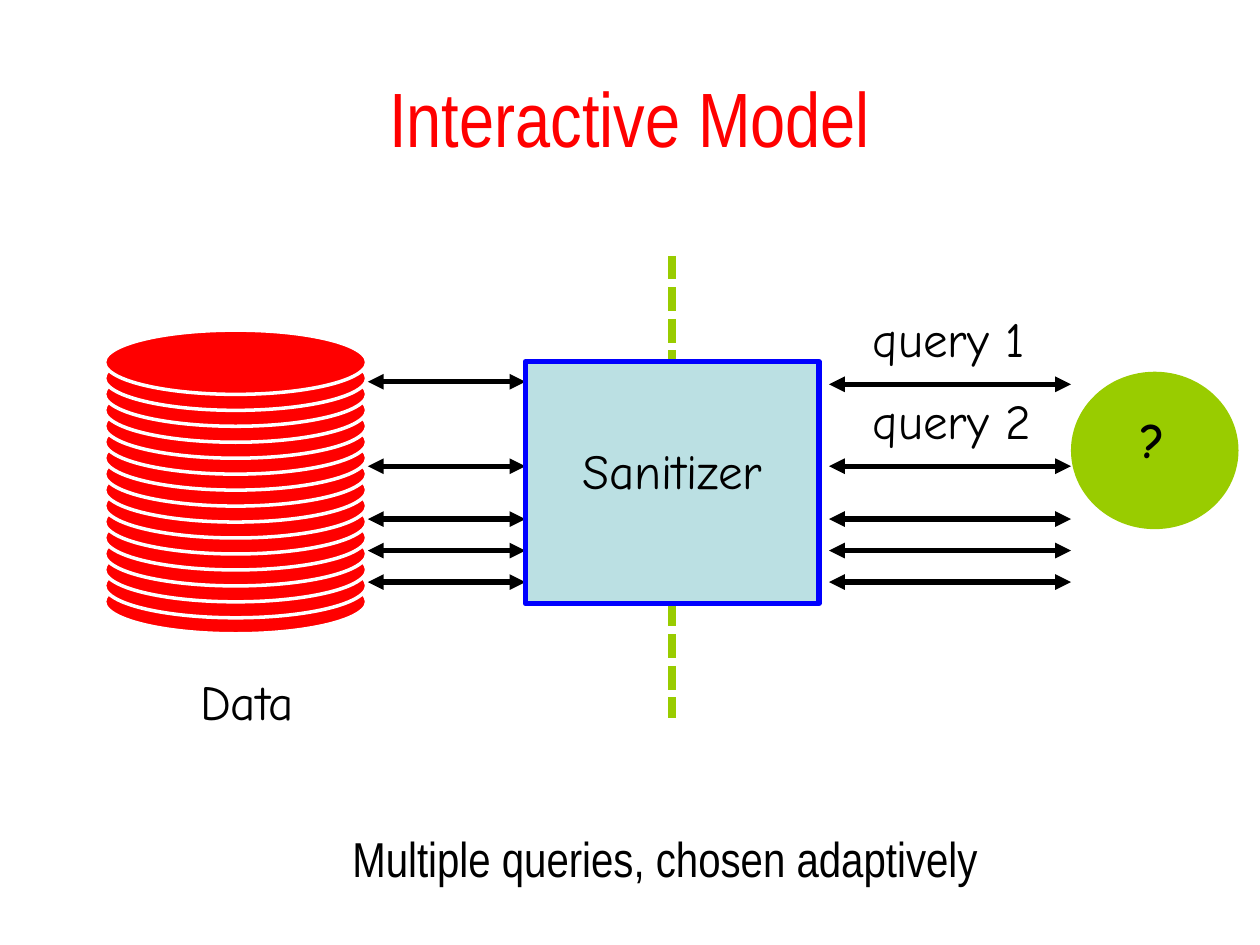
from dataclasses import dataclass
from typing import Any

from lxml import etree
from pptx import Presentation
from pptx import util as u
from pptx.dml.color import RGBColor
from pptx.enum import dml, shapes, text
from pptx.oxml import ns

RED = RGBColor(0xFF, 0x00, 0x00)
GREEN = RGBColor(0x99, 0xCC, 0x00)
BLUE = RGBColor(0x00, 0x00, 0xFF)
PALE_BLUE = RGBColor(0xBB, 0xE0, 0xE3)
BLACK = RGBColor(0x00, 0x00, 0x00)
WHITE = RGBColor(0xFF, 0xFF, 0xFF)

NARROW = "Arial Narrow"
COMIC = "Comic Neue"

DISK_COUNT = 16
DISK_BOTTOM = 4.52
DISK_TOP = 2.62
DISK_STEP = (DISK_BOTTOM - DISK_TOP) / (DISK_COUNT - 1)


@dataclass(frozen=True)
class Box:
    left: float
    top: float
    width: float
    height: float

    def lengths(self) -> tuple:
        return tuple(u.Inches(v) for v in (self.left, self.top, self.width, self.height))


@dataclass(frozen=True)
class Label:
    wording: str
    box: Box
    font: str = COMIC
    size: int = 28
    color: RGBColor = BLACK
    bold: bool = False
    align: Any = text.PP_ALIGN.CENTER
    anchor: Any = text.MSO_ANCHOR.TOP
    wrap: bool = True
    hanging: float = 0


@dataclass(frozen=True)
class ArrowColumn:
    start: float
    end: float
    heights: tuple


TITLE = Label("Interactive Model", Box(0.5, 0.3, 9, 1.25), NARROW, 44, RED,
              anchor=text.MSO_ANCHOR.MIDDLE)
CAPTIONS = (
    Label("Data", Box(0.67, 5.28, 2.58, 0.63)),
    Label("Multiple queries, chosen adaptively ", Box(2.67, 6.53, 5.3, 0.57),
          NARROW, wrap=False),
)
QUERIES = tuple(
    Label(f"query {number}", Box(6.83, top, 1.58, 0.57),
          align=text.PP_ALIGN.LEFT, hanging=0.38)
    for number, top in ((1, 2.4), (2, 3.05))
)
QUESTION = Label("?", Box(8.92, 3.2, 0.45, 0.63), bold=True, wrap=False)
SANITIZER = Label("Sanitizer", Box(4.17, 3.45, 2.33, 0.63), hanging=0.38)
ARROW_COLUMNS = (
    ArrowColumn(2.92, 4.17, (3.03, 3.7, 4.12, 4.37, 4.62)),
    ArrowColumn(6.58, 8.5, (3.05, 3.7, 4.12, 4.37, 4.62)),
)


def set_values(target: Any, values: dict) -> None:
    for name, value in values.items():
        setattr(target, name, value)


def write_label(shape: Any, label: Label) -> None:
    frame = shape.text_frame
    set_values(frame, {"word_wrap": label.wrap, "vertical_anchor": label.anchor})
    paragraph = frame.paragraphs[0]
    paragraph.alignment = label.align
    if label.hanging:
        properties = paragraph._p.get_or_add_pPr()
        properties.set("marL", str(u.Inches(label.hanging)))
        properties.set("indent", str(u.Inches(-label.hanging)))
    run = paragraph.add_run()
    run.text = label.wording
    set_values(run.font, {"name": label.font, "size": u.Pt(label.size), "bold": label.bold})
    run.font.color.rgb = label.color


def add_label(parent: Any, label: Label) -> None:
    write_label(parent.add_textbox(*label.box.lengths()), label)


def add_filled(parent: Any, kind: Any, box: Box, fill: RGBColor,
               line: RGBColor | None = None, width: float = 0) -> Any:
    shape = parent.add_shape(kind, *box.lengths())
    shape.shadow.inherit = False
    shape.fill.solid()
    shape.fill.fore_color.rgb = fill
    if line is None:
        shape.line.fill.background()
    else:
        shape.line.color.rgb = line
        shape.line.width = u.Pt(width)
    return shape


def add_line(parent: Any, start: tuple, end: tuple, color: RGBColor, width: float) -> Any:
    points = (u.Inches(value) for value in (*start, *end))
    connector = parent.add_connector(shapes.MSO_CONNECTOR.STRAIGHT, *points)
    connector.line.color.rgb = color
    connector.line.width = u.Pt(width)
    etree.SubElement(connector._element.spPr, ns.qn("a:effectLst"))
    return connector


def add_arrows(parent: Any, column: ArrowColumn) -> None:
    for height in column.heights:
        arrow = add_line(parent, (column.start, height), (column.end, height), BLACK, 3)
        outline = arrow.line._get_or_add_ln()
        for tip in ("a:headEnd", "a:tailEnd"):
            etree.SubElement(outline, ns.qn(tip), type="triangle")


def add_data_stack(parent: Any) -> None:
    stack = parent.add_group_shape().shapes
    for index in range(DISK_COUNT):
        box = Box(0.83, DISK_BOTTOM - index * DISK_STEP, 2.08, 0.51)
        add_filled(stack, shapes.MSO_SHAPE.OVAL, box, RED, WHITE, 2)


def add_analyst(parent: Any) -> None:
    analyst = parent.add_group_shape().shapes
    add_filled(analyst, shapes.MSO_SHAPE.OVAL, Box(8.5, 2.95, 1.33, 1.25), GREEN)
    panel = add_filled(analyst, shapes.MSO_SHAPE.RECTANGLE, QUESTION.box, GREEN)
    write_label(panel, QUESTION)


def main() -> None:
    presentation = Presentation()
    set_values(presentation, {"slide_width": u.Inches(10), "slide_height": u.Inches(7.5)})
    slide = presentation.slides.add_slide(presentation.slide_layouts[6])
    canvas = slide.shapes

    divider = add_line(canvas, (5.33, 2.03), (5.33, 5.7), GREEN, 4.5)
    divider.line.dash_style = dml.MSO_LINE.SQUARE_DOT
    for label in (TITLE, *CAPTIONS):
        add_label(canvas, label)
    add_data_stack(canvas)
    add_analyst(canvas)
    for column in ARROW_COLUMNS:
        add_arrows(canvas, column)
    for label in QUERIES:
        add_label(canvas, label)
    add_filled(canvas, shapes.MSO_SHAPE.RECTANGLE, Box(4.17, 2.87, 2.33, 1.92),
               PALE_BLUE, BLUE, 3)
    add_label(canvas, SANITIZER)

    presentation.save("out.pptx")


if __name__ == "__main__":
    main()
